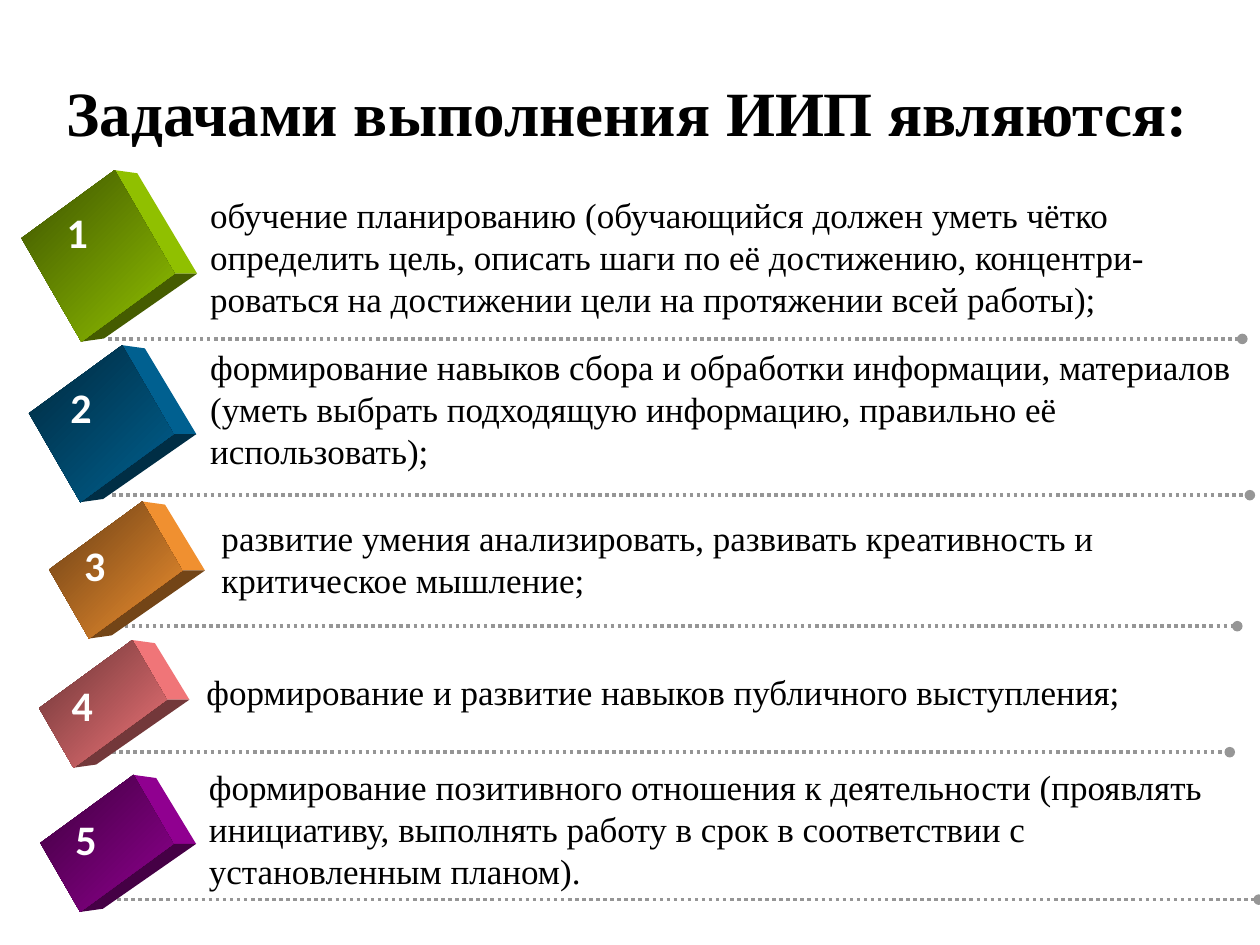
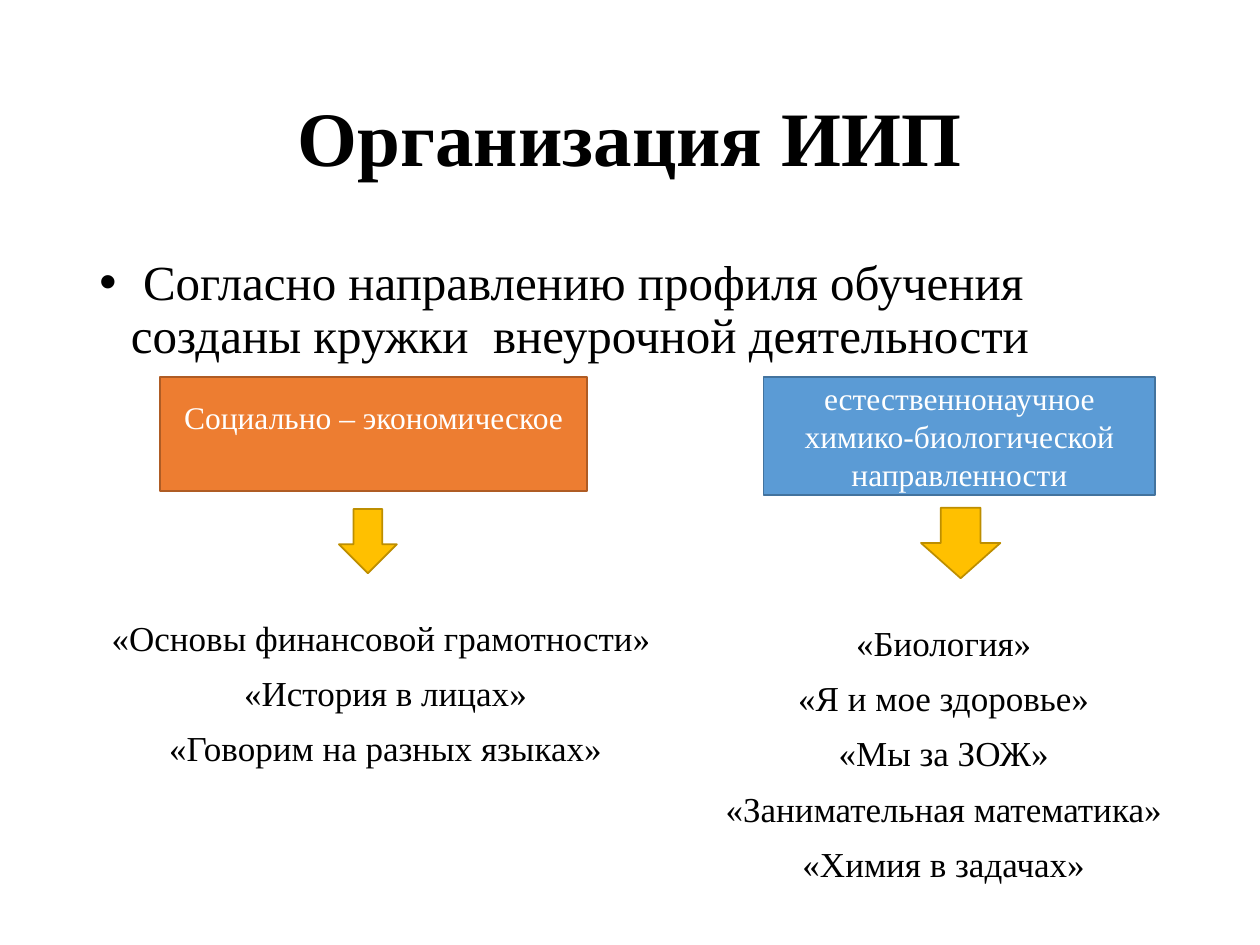
from lxml import etree
from pptx import Presentation
from pptx import util as u
from pptx.dml.color import RGBColor
from pptx.enum import dml, shapes, text
from pptx.oxml import ns

BLACK = RGBColor(0x00, 0x00, 0x00)
WHITE = RGBColor(0xFF, 0xFF, 0xFF)
GREY = RGBColor(0x96, 0x96, 0x96)
GREEN = RGBColor(0x99, 0xCC, 0x00)
BLUE = RGBColor(0x00, 0x66, 0x99)
AMBER = RGBColor(0xFF, 0x99, 0x33)
PINK = RGBColor(0xFF, 0x7C, 0x80)
PURPLE = RGBColor(0x99, 0x00, 0x99)
ORANGE = RGBColor(0xED, 0x7D, 0x31)
ORANGE_EDGE = RGBColor(0xAF, 0x5C, 0x24)
SKY = RGBColor(0x5B, 0x9B, 0xD5)
SKY_EDGE = RGBColor(0x43, 0x73, 0x9E)
GOLD = RGBColor(0xFF, 0xC0, 0x00)
GOLD_EDGE = RGBColor(0xBD, 0x8E, 0x00)

SERIF, SANS = "Times New Roman", "Calibri"
COLUMNS, ROWS = 100, 75

TASKS = [
    (GREEN, (1.7, 18.9), 9.9, (4.3, 15.9), (15.7, 14.9), (8.6, 98.6, 26.9),
     "обучение планированию (обучающийся должен уметь чётко определить цель, описать шаги по её "
     "достижению, концентри-роваться на достижении цели на протяжении всей работы);"),
    (BLUE, (2.3, 32.8), 8.5, (4.6, 29.8), (15.7, 26.9), (8.9, 99.2, 39.3),
     "формирование навыков сбора и обработки информации, материалов (уметь выбрать подходящую "
     "информацию, правильно её использовать);"),
    (AMBER, (3.9, 45.2), 6.6, (5.7, 42.3), (16.6, 40.5), (9.9, 98.2, 49.7),
     "развитие умения анализировать, развивать креативность и критическое мышление;"),
    (PINK, (3.1, 56.2), 5.7, (4.7, 53.4), (15.4, 52.7), (8.9, 97.6, 59.7),
     "формирование и развитие навыков публичного выступления;"),
    (PURPLE, (3.2, 66.9), 6.6, (5, 64.1), (15.6, 60.3), (9.3, 99.9, 71.4),
     "формирование позитивного отношения к деятельности (проявлять инициативу, выполнять работу "
     "в срок в соответствии с установленным планом)."),
]

DIRECTIONS = [
    ("Социально – экономическое", (12.7, 29.9, 33.9, 9.1), ORANGE, ORANGE_EDGE, 0.32,
     (26.9, 40.4, 4.6, 5.1), (5.5, 48.8, 50.2, 14.2),
     ["«Основы финансовой грамотности» ", "«История в лицах»", "«Говорим на разных языках»"]),
    ("естественнонаучное химико-биологической направленности", (60.6, 29.9, 31.1, 9.4),
     SKY, SKY_EDGE, 0.05, (73.1, 40.3, 6.3, 5.6), (49.8, 49.2, 50.2, 23.6),
     ["«Биология»", "«Я и мое здоровье»", "«Мы за ЗОЖ»", "«Занимательная математика»",
      "«Химия в задачах»"]),
]


def shade(colour, share):
    return RGBColor(*(round(channel * share) for channel in colour))


class Deck:
    """Hold the shared style and draw elements on the current slide."""

    def __init__(self):
        self.presentation = Presentation()
        self.presentation.slide_width = u.Inches(10)
        self.presentation.slide_height = u.Inches(7.5)
        self.slide = None

    def add_slide(self):
        self.slide = self.presentation.slides.add_slide(self.presentation.slide_layouts[6])

    def place(self, *lengths):
        sizes = (self.presentation.slide_width / COLUMNS, self.presentation.slide_height / ROWS)
        return [round(length * sizes[index % 2]) for index, length in enumerate(lengths)]

    def fill_text(self, frame, lines, size, colour=BLACK, font=SERIF, bold=False, align=None,
                  spacing=None, bullet=None):
        for index, line in enumerate(lines):
            paragraph = frame.paragraphs[0] if index == 0 else frame.add_paragraph()
            paragraph.text = line
            if bullet:
                properties = paragraph._p.get_or_add_pPr()
                properties.set("marL", str(u.Inches(0.25)))
                properties.set("indent", str(-u.Inches(0.25)))
                etree.SubElement(properties, ns.qn("a:buFont"), typeface="Arial")
                etree.SubElement(properties, ns.qn("a:buChar"), char=bullet)
            if align is not None:
                paragraph.alignment = align
            if spacing:
                paragraph.line_spacing = spacing
            if index:
                paragraph.space_before = u.Pt(10)
            paragraph.font.name, paragraph.font.size = font, u.Pt(size)
            paragraph.font.bold, paragraph.font.color.rgb = bold, colour

    def text(self, area, lines, size, wrap=True, anchor=text.MSO_ANCHOR.TOP, **style):
        frame = self.slide.shapes.add_textbox(*self.place(*area)).text_frame
        frame.word_wrap, frame.vertical_anchor = wrap, anchor
        self.fill_text(frame, lines, size, **style)

    def title(self, area, line, size, align=None):
        self.text(area, [line], size, anchor=text.MSO_ANCHOR.MIDDLE, bold=True, align=align,
                  spacing=0.9)

    def preset(self, kind, area, fill, edge):
        shape = self.slide.shapes.add_shape(kind, *self.place(*area))
        shape.shadow.inherit = False
        shape.fill.solid()
        shape.fill.fore_color.rgb = fill
        shape.line.color.rgb, shape.line.width = edge, u.Pt(1)
        return shape

    def label(self, area, line, fill, edge, bottom):
        frame = self.preset(shapes.MSO_SHAPE.RECTANGLE, area, fill, edge).text_frame
        frame.word_wrap, frame.vertical_anchor = True, text.MSO_ANCHOR.MIDDLE
        frame.margin_bottom = u.Inches(bottom)
        self.fill_text(frame, [line], 18, colour=WHITE, align=text.PP_ALIGN.CENTER)

    def face(self, corners, colour, gradient=False):
        points = [self.place(*corner) for corner in corners]
        builder = self.slide.shapes.build_freeform(*points[0])
        builder.add_line_segments(points[1:], close=True)
        shape = builder.convert_to_shape()
        shape.shadow.inherit = False
        shape.line.fill.background()
        if gradient:
            shape.fill.gradient()
            shape.fill.gradient_angle = 315
            for stop, position, share in zip(shape.fill.gradient_stops, (0, 1), (0.4, 0.95)):
                stop.position, stop.color.rgb = position, shade(colour, share)
        else:
            shape.fill.solid()
            shape.fill.fore_color.rgb = colour

    def block(self, left, depth, colour):
        x, y = left
        down_x, down_y = depth * 0.48, depth * 0.83
        top = (x + 7.4, y - 5.4)
        right = (top[0] + down_x, top[1] + down_y)
        bottom = (x + down_x, y + down_y)
        back_top = (top[0] + 1.8, top[1] + 0.25)
        back_right = (right[0] + 1.8, right[1])
        back_bottom = (bottom[0] + 1.8, bottom[1] - 0.25)
        self.face([top, back_top, back_right, right], shade(colour, 0.94))
        self.face([right, back_right, back_bottom, bottom], shade(colour, 0.45))
        self.face([left, top, right, bottom], colour, gradient=True)

    def dotted_line(self, start, end, row):
        line = self.slide.shapes.add_connector(
            shapes.MSO_CONNECTOR.STRAIGHT, *self.place(start, row, end, row))
        line.line.color.rgb, line.line.width = GREY, u.Pt(2)
        line.line.dash_style = dml.MSO_LINE.ROUND_DOT
        properties = line._element.spPr
        etree.SubElement(properties.find(ns.qn("a:ln")), ns.qn("a:tailEnd"), type="oval")
        etree.SubElement(properties, ns.qn("a:effectLst"))


def build_tasks(deck):
    deck.add_slide()
    deck.title((4.3, 4.3, 93.3, 9.8), "Задачами выполнения ИИП являются:", 36)
    for number, (colour, corner, depth, digit, body, line, task) in enumerate(TASKS, 1):
        deck.dotted_line(*line)
        deck.block(corner, depth, colour)
        deck.text((*body, COLUMNS - body[0], 10), [task], 20)
        deck.text((*digit, 6.6, 5.4), [str(number)], 24, wrap=False, colour=WHITE, font=SANS,
                  bold=True)


def build_organisation(deck):
    center = text.PP_ALIGN.CENTER
    deck.add_slide()
    deck.title((6.9, 4, 86.2, 14.5), "Организация ИИП", 44, align=center)
    deck.text((6.9, 20, 86.2, 11.9),
              [" Согласно направлению профиля обучения созданы кружки  внеурочной деятельности"],
              28, spacing=0.9, bullet="•")
    for name, box, fill, edge, bottom, arrow, area, clubs in DIRECTIONS:
        deck.label(box, name, fill, edge, bottom)
        deck.preset(shapes.MSO_SHAPE.DOWN_ARROW, arrow, GOLD, GOLD_EDGE)
        deck.text(area, clubs, 20, align=center, spacing=0.9)


def main():
    deck = Deck()
    build_tasks(deck)
    build_organisation(deck)
    deck.presentation.save("out.pptx")


if __name__ == "__main__":
    main()
